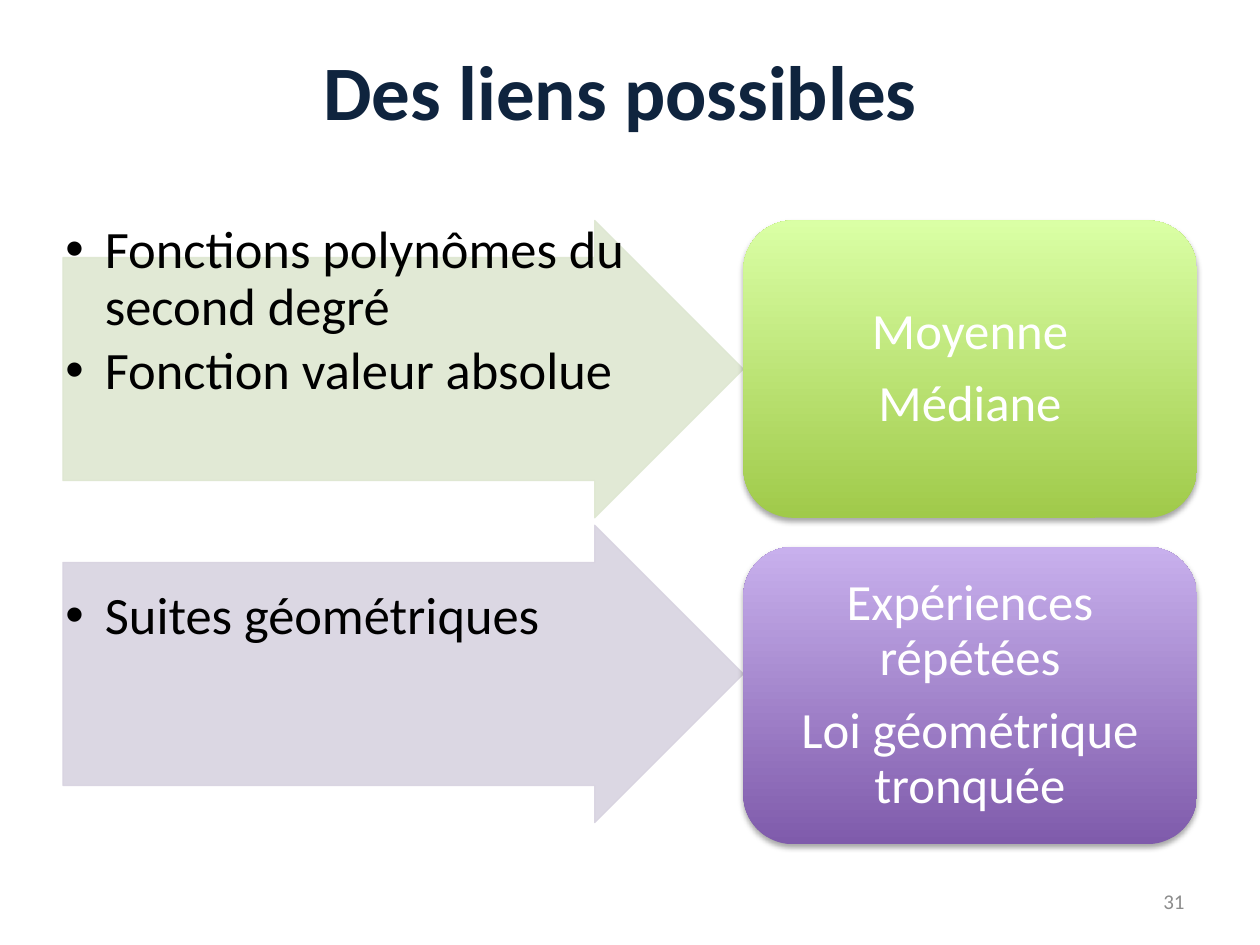
import pptx
import pptx.dml.color
import pptx.enum.shapes
import pptx.enum.text
import pptx.oxml
import pptx.oxml.ns
import pptx.util

Pt = pptx.util.Pt
SHAPE = pptx.enum.shapes.MSO_SHAPE
ALIGN = pptx.enum.text.PP_ALIGN
ANCHOR = pptx.enum.text.MSO_ANCHOR
LEFT, ARROW_WIDTH, CARD_WIDTH, ROW_HEIGHT = 36, 388.8, 259.2, 169.9
ROWS = [
    {"arrow_top": 126, "arrow_color": "DEE7D1", "inset_top": 1.44,
     "functions": ["Fonctions polynômes du second degré", "Fonction valeur absolue"],
     "card_top": 126, "gradient": ["A0CA4A", "DAFFA5"],
     "topics": ["Moyenne", "Médiane"]},
    {"arrow_top": 300.2, "arrow_color": "D8D3E0", "inset_top": 42.5,
     "functions": ["Suites géométriques"],
     "card_top": 312.5, "gradient": ["7F5BAB", "C8B0ED"],
     "topics": ["Expériences répétées", "Loi géométrique tronquée"]},
]


def rgb(value):
    """Turn a hex string into a colour."""
    return pptx.dml.color.RGBColor.from_string(value)


def set_all(target, values):
    """Set every attribute named in a dict."""
    for name, value in values.items():
        setattr(target, name, value)


def add_xml(parent, markup):
    """Append a drawing element given as markup to a parent."""
    declaration = pptx.oxml.ns.nsdecls("a")
    parent.append(pptx.oxml.parse_xml(markup.replace(" ", f" {declaration} ", 1)))


def write(shape, lines, font, color, frame=None, para_format=None, bullet_indent=0):
    """Write one formatted paragraph per line into a shape."""
    text = shape.text_frame
    set_all(text, {"word_wrap": True, **(frame or {})})
    for index, line in enumerate(lines):
        para = text.add_paragraph() if index else text.paragraphs[0]
        set_all(para, para_format or {})
        if bullet_indent:
            properties = para._p.get_or_add_pPr()
            properties.set("marL", str(Pt(bullet_indent)))
            properties.set("indent", str(-Pt(bullet_indent)))
            add_xml(properties, '<a:buFont typeface="Arial"/>')
            add_xml(properties, '<a:buChar char="•"/>')
        span = para.add_run()
        span.text = line
        set_all(span.font, {"name": "Calibri", **font})
        span.font.color.rgb = rgb(color)


def add_text(page, box, *content, **formats):
    """Add a text box at left, top, width, height."""
    write(page.shapes.add_textbox(*map(Pt, box)), *content, **formats)


def add_arrow(page, box, color):
    """Add a slightly transparent right arrow."""
    arrow = page.shapes.add_shape(SHAPE.RIGHT_ARROW, *map(Pt, box))
    arrow.shadow.inherit = False
    arrow.adjustments[0], arrow.adjustments[1] = 0.75, 0.5
    arrow.fill.solid()
    arrow.line.width = Pt(0.75)
    for fill in (arrow.fill, arrow.line.fill):
        fill.solid()
        fill.fore_color.rgb = rgb(color)
    for element in arrow._element.spPr.iter(pptx.oxml.ns.qn("a:srgbClr")):
        add_xml(element, '<a:alpha val="90000"/>')


def add_card(page, box, gradient, topics):
    """Add a shaded rounded card with centred topics."""
    card = page.shapes.add_shape(SHAPE.ROUNDED_RECTANGLE, *map(Pt, box))
    card.line.fill.background()
    card.fill.gradient()
    card.fill.gradient_angle = 90
    for stop, color in zip(card.fill.gradient_stops, gradient):
        stop.color.rgb = rgb(color)
    card.shadow.inherit = False
    effects = card._element.spPr.find(pptx.oxml.ns.qn("a:effectLst"))
    add_xml(effects, f'<a:outerShdw blurRad="{Pt(3.1)}" dist="{Pt(1.8)}" dir="5400000" '
                     'rotWithShape="0"><a:srgbClr val="000000"><a:alpha val="35000"/>'
                     '</a:srgbClr></a:outerShdw>')
    write(card, topics, {"size": Pt(29)}, "FFFFFF",
          frame={"vertical_anchor": ANCHOR.MIDDLE, "margin_left": Pt(8.64),
                 "margin_right": Pt(8.64), "margin_top": Pt(4.32), "margin_bottom": Pt(4.32)},
          para_format={"alignment": ALIGN.CENTER, "line_spacing": 0.9, "space_after": Pt(10.15)})


def add_row(page, row):
    """Add an arrow with its functions and the card it points to."""
    arrow_box = (LEFT, row["arrow_top"], ARROW_WIDTH, ROW_HEIGHT)
    add_arrow(page, arrow_box, row["arrow_color"])
    add_text(page, arrow_box, row["functions"], {"size": Pt(30)}, "000000",
             frame={"margin_left": Pt(1.44), "margin_right": Pt(1.44),
                    "margin_top": Pt(row["inset_top"]), "margin_bottom": Pt(1.44)},
             para_format={"line_spacing": 0.9, "space_after": Pt(4.5)}, bullet_indent=22.5)
    card_box = (LEFT + ARROW_WIDTH, row["card_top"], CARD_WIDTH, ROW_HEIGHT)
    add_card(page, card_box, row["gradient"], row["topics"])


def main():
    """Build and save the slide."""
    deck = pptx.Presentation()
    set_all(deck, {"slide_width": Pt(720), "slide_height": Pt(540)})
    page = deck.slides.add_slide(deck.slide_layouts[6])
    for row in ROWS:
        add_row(page, row)
    add_text(page, (36, 21.6, 637.2, 60.5), ["Des liens possibles"],
             {"size": Pt(44), "bold": True}, "0F243E", para_format={"alignment": ALIGN.CENTER})
    add_text(page, (516, 500.5, 168, 28.8), ["31"], {"size": Pt(12)}, "8C8C8C",
             frame={"vertical_anchor": ANCHOR.MIDDLE}, para_format={"alignment": ALIGN.RIGHT})
    deck.save("out.pptx")


if __name__ == "__main__":
    main()
